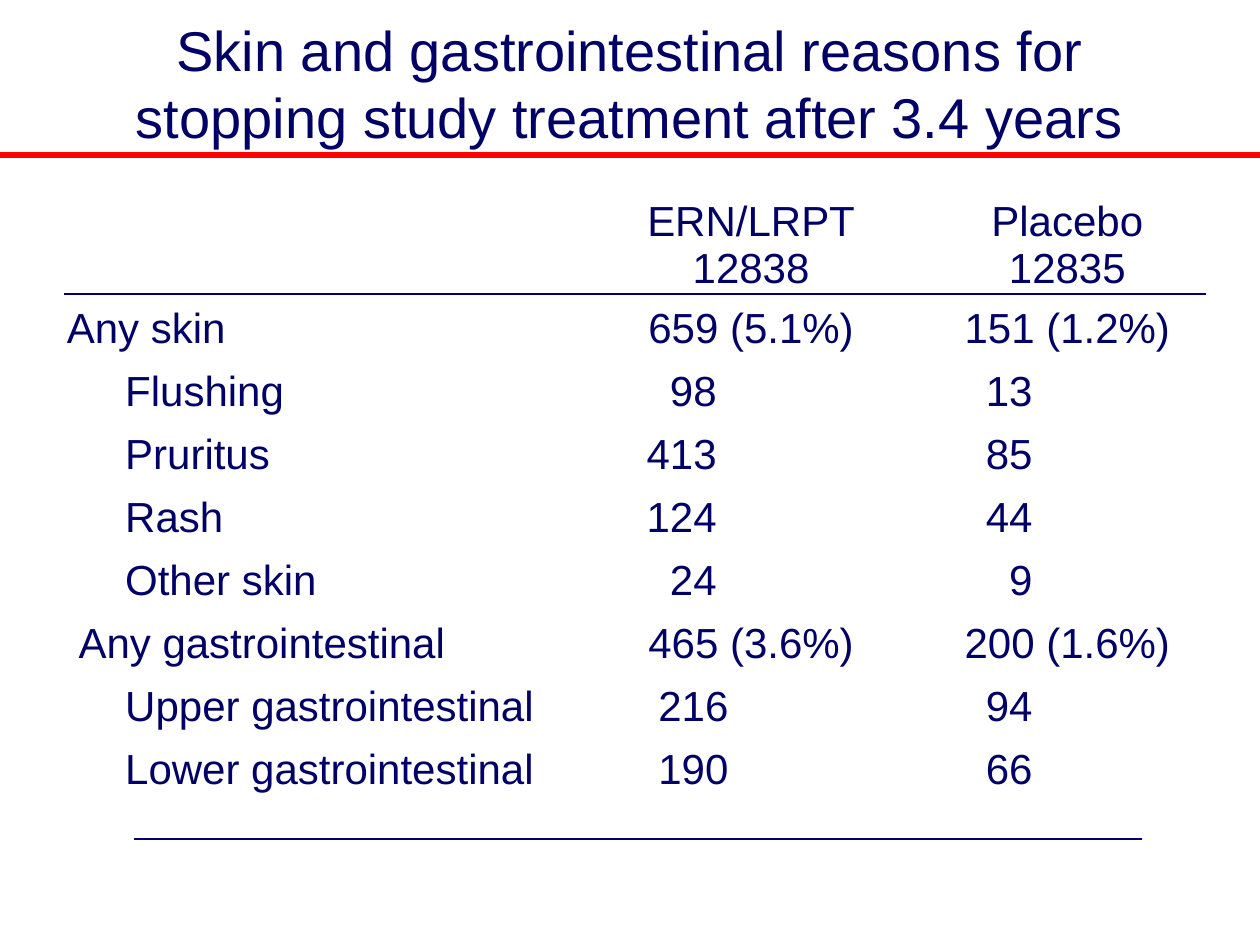
from lxml import etree
from pptx import Presentation
from pptx.dml.color import RGBColor
from pptx.enum.shapes import MSO_CONNECTOR
from pptx.enum.text import MSO_ANCHOR, PP_ALIGN
from pptx.oxml.ns import qn
from pptx.util import Pt

LEFT, CENTER, RIGHT = PP_ALIGN.LEFT, PP_ALIGN.CENTER, PP_ALIGN.RIGHT
TOP, MIDDLE, BOTTOM = MSO_ANCHOR.TOP, MSO_ANCHOR.MIDDLE, MSO_ANCHOR.BOTTOM
STRAIGHT = MSO_CONNECTOR.STRAIGHT

NAVY, RED = "000066", "FF0000"
SLIDE_WIDTH, SLIDE_HEIGHT = 720, 540
COLUMN_WIDTHS = (304.6, 93.6, 93.6, 174.2)
HEADER_HEIGHT, ROW_HEIGHT, LAST_HEIGHT = 62, 34, 31
MARGIN = 7.2
SUB_INDENT = 33.35

HEADERS = ("", "ERN/LRPT\n12838", "Placebo\n12835")
# label, label indent, active count, its right margin, placebo count;
# a right margin of None centres both counts
REASONS = (
    ("Any skin", 0, "659 (5.1%)", None, "151 (1.2%)"),
    ("Flushing", SUB_INDENT, "98", 113.3, "13"),
    ("Pruritus", SUB_INDENT, "413", 113.3, "85"),
    ("Rash", SUB_INDENT, "124", 113.3, "44"),
    ("Other skin", SUB_INDENT, "24", 113.3, "9"),
    ("Any gastrointestinal", 6.67, "465 (3.6%)", None, "200 (1.6%)"),
    ("Upper gastrointestinal", SUB_INDENT, "216", 106.6, "94"),
    ("Lower gastrointestinal", SUB_INDENT, "190", 106.6, "66"),
)
PLACEBO_MARGIN = 107


def color(hex_string):
    return RGBColor.from_string(hex_string)


def write(text_frame, text, size=24, align=LEFT, ink=NAVY, font="Arial", spacing=None):
    """Fill a text frame, one paragraph for each line of the text."""
    for index, line in enumerate(text.split("\n")):
        paragraph = text_frame.add_paragraph() if index else text_frame.paragraphs[0]
        paragraph.alignment = align
        if spacing:
            paragraph.line_spacing = Pt(spacing)
        run = paragraph.add_run()
        run.text = line
        run.font.size = Pt(size)
        run.font.name = font
        run.font.color.rgb = color(ink)


class SlideBuilder:
    """Holds the current slide and draws its elements."""

    def __init__(self, slide):
        self.slide = slide

    def title(self, text, left, top, width, height):
        shape = self.slide.shapes.add_textbox(Pt(left), Pt(top), Pt(width), Pt(height))
        frame = shape.text_frame
        frame.word_wrap = True
        frame.vertical_anchor = MIDDLE
        frame.margin_top = frame.margin_bottom = 0
        write(frame, text, size=32, align=CENTER, spacing=38.3)

    def rule(self, left, right, y, ink=NAVY, weight=1):
        """Draw a horizontal line."""
        connector = self.slide.shapes.add_connector(
            STRAIGHT, Pt(left), Pt(y), Pt(right), Pt(y))
        connector.line.color.rgb = color(ink)
        connector.line.width = Pt(weight)
        etree.SubElement(connector._element.spPr, qn("a:effectLst"))

    def cell(self, cell, text, align=LEFT, anchor=TOP, left=MARGIN, right=MARGIN):
        cell.vertical_anchor = anchor
        cell.margin_left, cell.margin_right = Pt(left), Pt(right)
        write(cell.text_frame, text, align=align)

    def reasons_table(self, left, top):
        heights = [HEADER_HEIGHT] + [ROW_HEIGHT] * len(REASONS) + [LAST_HEIGHT]
        table = self.slide.shapes.add_table(
            len(heights), len(COLUMN_WIDTHS), Pt(left), Pt(top),
            Pt(sum(COLUMN_WIDTHS)), Pt(sum(heights))).table
        table.first_row = table.horz_banding = False
        for column, width in zip(table.columns, COLUMN_WIDTHS):
            column.width = Pt(width)
        for row, height in zip(table.rows, heights):
            row.height = Pt(height)
        for cell in table.iter_cells():
            cell.fill.background()
            cell.margin_top = cell.margin_bottom = Pt(3.6)

        last = len(heights) - 1
        for row in range(last):
            table.cell(row, 1).merge(table.cell(row, 2))
        table.cell(last, 0).merge(table.cell(last, 1))

        for column, text in zip((0, 1, 3), HEADERS):
            if text:
                self.cell(table.cell(0, column), text, align=CENTER, anchor=BOTTOM)
        for row, (label, indent, active, margin, placebo) in enumerate(REASONS, 1):
            self.cell(table.cell(row, 0), label, left=MARGIN + indent)
            counts = ((1, active, margin), (3, placebo, PLACEBO_MARGIN))
            for column, text, right in counts:
                if margin is None:
                    self.cell(table.cell(row, column), text, align=CENTER)
                else:
                    self.cell(table.cell(row, column), text, align=RIGHT, right=right)


def main():
    presentation = Presentation()
    presentation.slide_width = Pt(SLIDE_WIDTH)
    presentation.slide_height = Pt(SLIDE_HEIGHT)
    builder = SlideBuilder(presentation.slides.add_slide(presentation.slide_layouts[6]))
    builder.title("Skin and gastrointestinal reasons for stopping study treatment "
                  "after 3.4 years", 36, 9, 648, 77)
    builder.reasons_table(31, 106)
    builder.rule(0, SLIDE_WIDTH, 88.5, ink=RED, weight=3)
    builder.rule(36.7, 689, 168)
    builder.rule(76.5, 652.5, 479.5)
    presentation.save("out.pptx")


if __name__ == "__main__":
    main()
